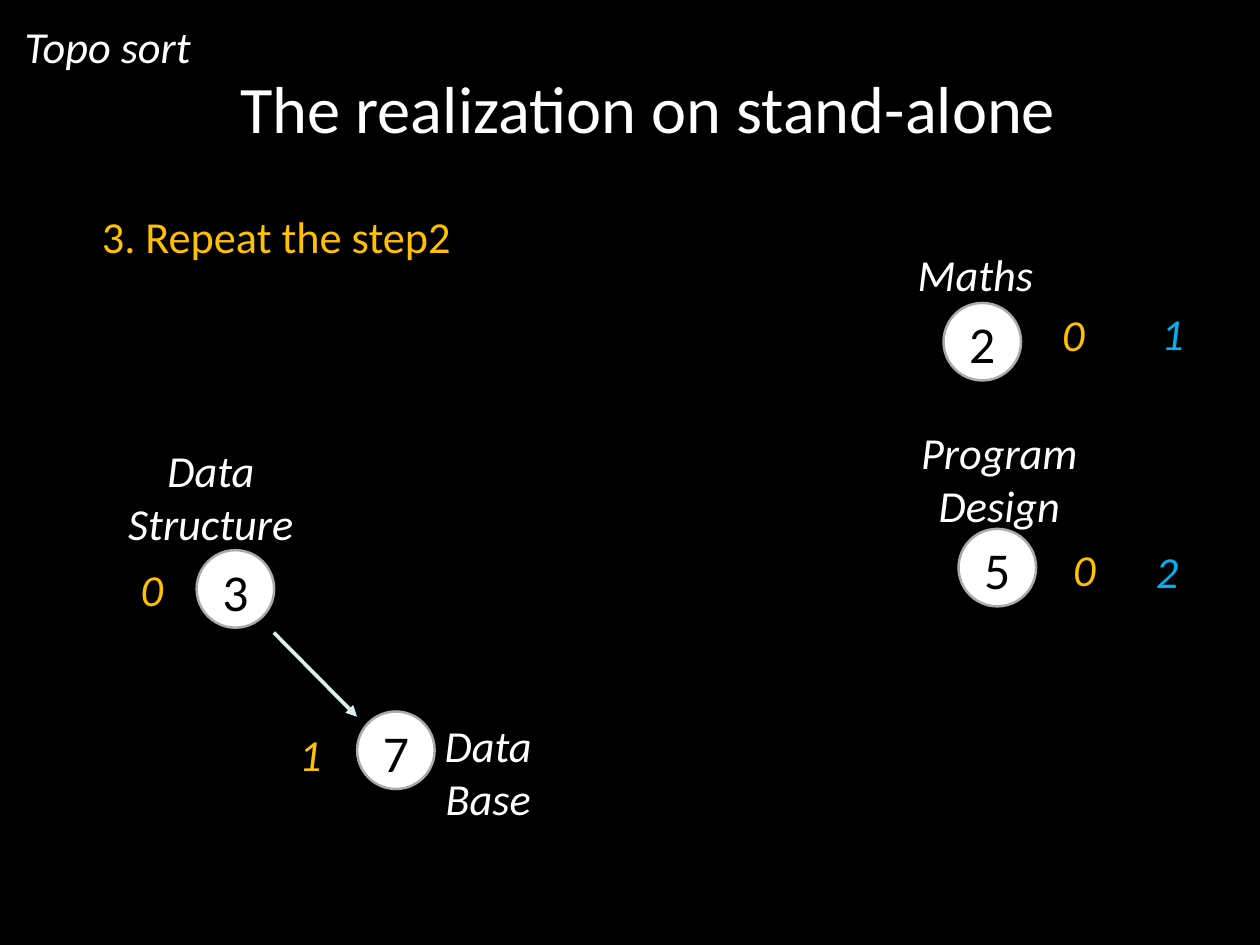
"""Builds the topological sort slide that shows step 3 of the stand-alone realization."""
import pptx
import pptx.dml.color
import pptx.enum.shapes
import pptx.enum.text
import pptx.oxml
import pptx.oxml.ns
import pptx.util

Pt = pptx.util.Pt
RGBColor = pptx.dml.color.RGBColor
ALIGN = pptx.enum.text.PP_ALIGN
ANCHOR = pptx.enum.text.MSO_ANCHOR
SHAPE = pptx.enum.shapes.MSO_SHAPE
CONNECTOR = pptx.enum.shapes.MSO_CONNECTOR

BLACK = RGBColor(0x00, 0x00, 0x00)
WHITE = RGBColor(0xFF, 0xFF, 0xFF)
GREY = RGBColor(0xAA, 0xAA, 0xAA)
PALE_BLUE = RGBColor(0xDA, 0xED, 0xEF)
AMBER = RGBColor(0xFF, 0xC0, 0x00)
BLUE = RGBColor(0x00, 0xB0, 0xF0)

NODE_SIZE = 63
NUMBER_DROP = 4

NODES = [("2", 766.8, 246.2), ("3", 159.8, 447.1), ("5", 779, 429.8), ("7", 290.2, 578.2)]
COURSES = [
    ("Program Design", 731.5, 352.8),
    ("Data Structure", 90.7, 367.2),
    ("Data Base", 316.1, 591.1),
]
COUNTS = [
    ("0", 842.8, 429.5, AMBER),
    ("0", 833.8, 239, AMBER),
    ("1", 213.8, 580.3, AMBER),
    ("0", 85, 445.7, AMBER),
    ("1", 914.4, 238.3, BLUE),
    ("2", 910.1, 431.3, BLUE),
]


class SlideBuilder:
    """Holds the text style and the current slide."""

    def __init__(self, slide):
        self.slide = slide
        self.font_format = {"name": "Calibri", "size": Pt(36), "italic": True}

    def background(self, color):
        fill = self.slide.background.fill
        fill.solid()
        fill.fore_color.rgb = color

    def text(self, words, box, color=WHITE, align=ALIGN.CENTER, anchor=ANCHOR.MIDDLE,
             insets=(7.2, 3.6, 7.2, 3.6), **font_changes):
        frame = self.slide.shapes.add_textbox(*map(Pt, box)).text_frame
        left, top, right, bottom = map(Pt, insets)
        frame_format = {
            "word_wrap": True, "vertical_anchor": anchor,
            "margin_left": left, "margin_top": top,
            "margin_right": right, "margin_bottom": bottom,
        }
        for name, value in frame_format.items():
            setattr(frame, name, value)
        paragraph = frame.paragraphs[0]
        paragraph.alignment = align
        run = paragraph.add_run()
        run.text = words
        for name, value in {**self.font_format, **font_changes}.items():
            setattr(run.font, name, value)
        run.font.color.rgb = color

    def node(self, number, left, top):
        box = (left, top, NODE_SIZE, NODE_SIZE)
        circle = self.slide.shapes.add_shape(SHAPE.OVAL, *map(Pt, box))
        circle.shadow.inherit = False
        circle.fill.solid()
        circle.fill.fore_color.rgb = WHITE
        circle.line.color.rgb = GREY
        circle.line.width = Pt(2)
        number_box = (left, top + NUMBER_DROP, NODE_SIZE, NODE_SIZE - NUMBER_DROP)
        self.text(number, number_box, BLACK, anchor=ANCHOR.TOP,
                  insets=(0, 3.6, 0, 3.6), size=Pt(42), italic=False)

    def arrow(self, start, end):
        arrow = self.slide.shapes.add_connector(CONNECTOR.STRAIGHT, *map(Pt, start + end))
        arrow.line.color.rgb = PALE_BLUE
        arrow.line.width = Pt(3)
        line = arrow.line._get_or_add_ln()
        head = pptx.oxml.parse_xml(f'<a:tailEnd {pptx.oxml.ns.nsdecls("a")} type="triangle"/>')
        line.append(head)
        effects = pptx.oxml.parse_xml(f'<a:effectLst {pptx.oxml.ns.nsdecls("a")}/>')
        line.addnext(effects)


def main():
    presentation = pptx.Presentation()
    presentation.slide_width = Pt(1024)
    presentation.slide_height = Pt(768)
    builder = SlideBuilder(presentation.slides.add_slide(presentation.slide_layouts[6]))
    builder.background(BLACK)

    builder.text("Topo sort", (13, 1.4, 648.7, 72), align=ALIGN.LEFT)
    for number, left, top in NODES:
        builder.node(number, left, top)
    builder.arrow((222.5, 514.1), (290.2, 582.5))

    builder.text("Maths", (738.7, 186.5, 118.8, 72), align=ALIGN.LEFT)
    for course, left, top in COURSES:
        builder.text(course, (left, top, 161.3, 72))
    for count, left, top, color in COUNTS:
        builder.text(count, (left, top, 77, 65), color)

    heading_insets = (29.5, 4.3, 4.3, 4.3)
    builder.text("The realization on stand-alone", (115.5, 10.8, 797, 152.6),
                 insets=heading_insets, size=Pt(54), italic=False)
    builder.text("3. Repeat the step2", (53.3, 124.6, 847.4, 134.6), AMBER,
                 align=ALIGN.LEFT, insets=heading_insets, italic=False)
    presentation.save("out.pptx")


if __name__ == "__main__":
    main()
